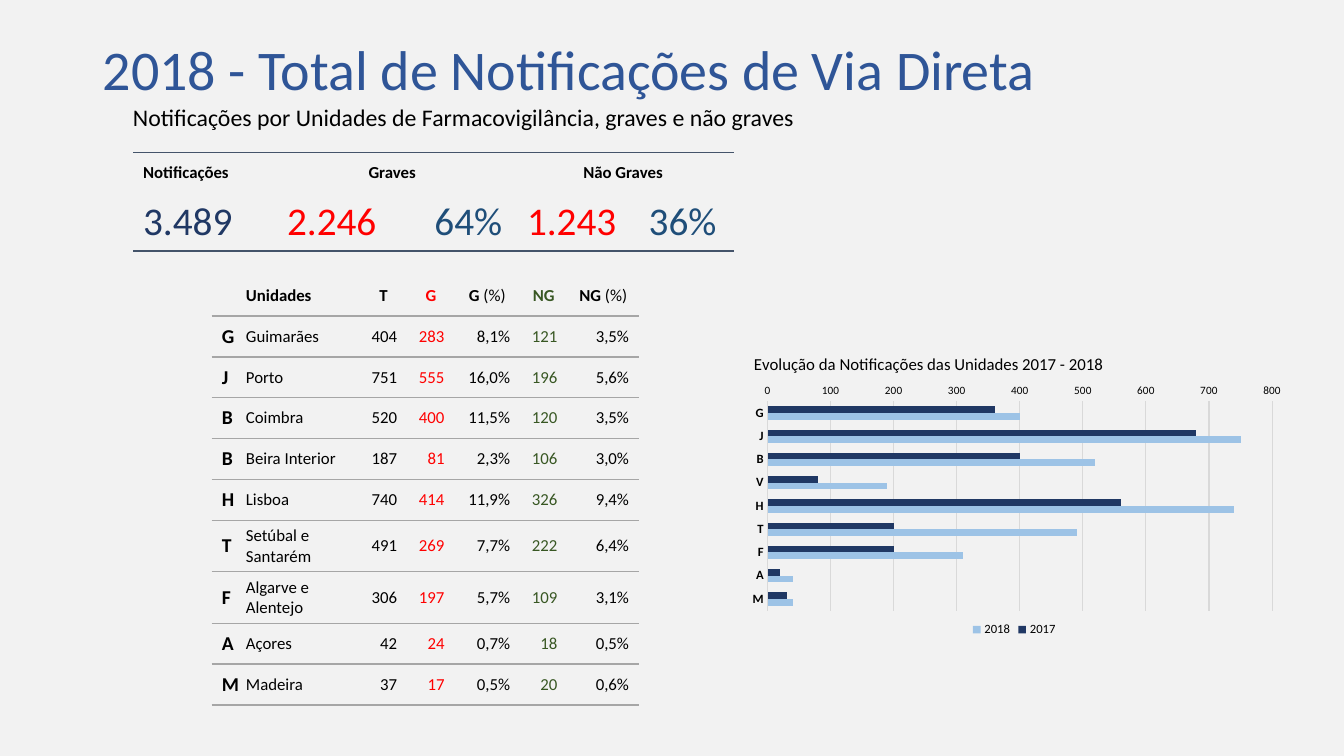
from dataclasses import dataclass

from lxml import etree
from pptx import Presentation
from pptx.chart.data import CategoryChartData
from pptx.dml.color import RGBColor
from pptx.enum.chart import XL_CHART_TYPE, XL_LEGEND_POSITION, XL_TICK_MARK
from pptx.enum.text import MSO_ANCHOR, MSO_AUTO_SIZE, PP_ALIGN
from pptx.oxml import parse_xml
from pptx.oxml.ns import nsdecls, qn
from pptx.util import Inches, Pt


@dataclass(frozen=True)
class Theme:
    font: str = "Calibri"
    background: str = "F2F2F2"
    title: str = "2F5597"
    text: str = "000000"
    navy: str = "203864"
    share: str = "1F4E79"
    serious: str = "FF0000"
    mild: str = "385723"
    light_bar: str = "9DC3E6"
    grid: str = "D9D9D9"
    summary_rule: str = "44546A"
    unit_rule: str = "A6A6A6"
    title_size: int = 40
    subtitle_size: int = 17
    figure_size: int = 28
    letter_size: int = 14
    body_size: int = 12
    chart_size: int = 10
    legend_size: int = 9
    scale_size: int = 8


THEME = Theme()
NO_STYLE = "{2D5ABB26-0587-4C30-8999-92F81FD0307C}"
LEFT, CENTER, RIGHT = PP_ALIGN.LEFT, PP_ALIGN.CENTER, PP_ALIGN.RIGHT

UNITS = [
    ("G", "Guimarães", "404", "283", "8,1%", "121", "3,5%"),
    ("J", "Porto", "751", "555", "16,0%", "196", "5,6%"),
    ("B", "Coimbra", "520", "400", "11,5%", "120", "3,5%"),
    ("B", "Beira Interior", "187", "81", "2,3%", "106", "3,0%"),
    ("H", "Lisboa", "740", "414", "11,9%", "326", "9,4%"),
    ("T", "Setúbal e Santarém", "491", "269", "7,7%", "222", "6,4%"),
    ("F", "Algarve e Alentejo", "306", "197", "5,7%", "109", "3,1%"),
    ("A", "Açores", "42", "24", "0,7%", "18", "0,5%"),
    ("M", "Madeira", "37", "17", "0,5%", "20", "0,6%"),
]
TWO_LINE_LETTERS = "TF"
LINE_ROW, TWO_LINE_ROW = 3.65 / 9, 0.51
CHART_LETTERS = "GJBVHTFAM"
TOTALS_2017 = (360, 680, 400, 80, 560, 200, 200, 20, 30)
TOTALS_2018 = (400, 750, 520, 190, 740, 490, 310, 40, 40)


def style_font(font, size, color=THEME.text, bold=False):
    font.name, font.size, font.bold = THEME.font, Pt(size), bold
    font.color.rgb = RGBColor.from_string(color)


def write(frame, text, size, color=THEME.text, bold=False, align=LEFT):
    frame.text = text
    paragraph = frame.paragraphs[0]
    paragraph.alignment = align
    style_font(paragraph.runs[0].font, size, color, bold)
    return paragraph


def add_title(slide, text):
    title = slide.shapes.title
    title.left, title.top = Inches(0.92), Inches(0.4)
    title.width, title.height = Inches(9.45), Inches(0.63)
    frame = title.text_frame
    frame.auto_size = MSO_AUTO_SIZE.NONE
    frame.vertical_anchor = MSO_ANCHOR.MIDDLE
    write(frame, text, THEME.title_size, THEME.title).line_spacing = 0.9


def add_subtitle(slide, text):
    box = slide.shapes.add_textbox(Inches(1.22), Inches(0.96), Inches(8.26), Inches(0.41))
    box.text_frame.word_wrap = True
    box.text_frame.vertical_anchor = MSO_ANCHOR.MIDDLE
    write(box.text_frame, text, THEME.subtitle_size, align=PP_ALIGN.JUSTIFY)


def add_plain_table(slide, left, top, widths, heights):
    """Add a table without style, fills or lines."""
    table = slide.shapes.add_table(
        len(heights), len(widths), Inches(left), Inches(top),
        Inches(sum(widths)), Inches(sum(heights))).table
    table.first_row = table.horz_banding = False
    table._tbl.tblPr.find(qn("a:tableStyleId")).text = NO_STYLE
    for column, width in zip(table.columns, widths):
        column.width = Inches(width)
    for row, height in zip(table.rows, heights):
        row.height = Inches(height)
    for cell in table.iter_cells():
        cell.fill.background()
    return table


def rule_row(table, row, side, color):
    """Draw a 1 pt line on one side (lnT or lnB) of a row."""
    for column in range(len(table.columns)):
        properties = table.cell(row, column)._tc.get_or_add_tcPr()
        properties.insert(0, parse_xml(
            f'<a:{side} {nsdecls("a")} w="{Pt(1)}"><a:solidFill>'
            f'<a:srgbClr val="{color}"/></a:solidFill></a:{side}>'))


def add_summary(slide):
    table = add_plain_table(slide, 1.32, 1.51, (1.38, 1.18, 1.2, 1.18, 1.02), (0.41, 0.57))
    for column, heading, align in ((0, "Notificações", LEFT), (1, "Graves", CENTER),
                                   (3, "Não Graves", CENTER)):
        cell = table.cell(0, column)
        if column:
            cell.merge(table.cell(0, column + 1))
        cell.vertical_anchor = MSO_ANCHOR.MIDDLE
        write(cell.text_frame, heading, THEME.body_size, bold=True, align=align)
    figures = (("3.489", THEME.navy, LEFT), ("2.246", THEME.serious, CENTER),
               ("64%", THEME.share, RIGHT), ("1.243", THEME.serious, CENTER),
               ("36%", THEME.share, CENTER))
    for column, (figure, color, align) in enumerate(figures):
        write(table.cell(1, column).text_frame, figure, THEME.figure_size, color, align=align)
    rule_row(table, 0, "lnT", THEME.summary_rule)
    rule_row(table, 1, "lnB", THEME.summary_rule)


def add_units(slide):
    heights = [LINE_ROW] + [TWO_LINE_ROW if unit[0] in TWO_LINE_LETTERS else LINE_ROW
                            for unit in UNITS]
    table = add_plain_table(slide, 2.1, 2.73, (0.23, 1.23, 0.47, 0.47, 0.65, 0.47, 0.71),
                            heights)
    headings = ("", "Unidades", "T", "G", "G", "NG", "NG")
    colors = (THEME.text, THEME.text, THEME.text, THEME.serious, THEME.text,
              THEME.mild, THEME.text)
    for column, (heading, color) in enumerate(zip(headings, colors)):
        if not heading:
            continue
        cell = table.cell(0, column)
        cell.vertical_anchor = MSO_ANCHOR.MIDDLE
        paragraph = write(cell.text_frame, heading, THEME.body_size, color, True,
                          LEFT if column == 1 else CENTER)
        if column in (4, 6):
            percent = paragraph.add_run()
            percent.text = " (%)"
            style_font(percent.font, THEME.body_size)
    for row, unit in enumerate(UNITS, start=1):
        for column, (value, color) in enumerate(zip(unit, colors)):
            cell = table.cell(row, column)
            cell.vertical_anchor = MSO_ANCHOR.MIDDLE
            is_letter = column == 0
            size = THEME.letter_size if is_letter else THEME.body_size
            align = (CENTER, LEFT)[column] if column < 2 else RIGHT
            write(cell.text_frame, value, size, color, is_letter, align)
    for row in range(len(table.rows)):
        rule_row(table, row, "lnB", THEME.unit_rule)


def set_layout(parent, position, **values):
    """Fix the place of a chart part, as fractions of the chart."""
    for old in parent.findall(qn("c:layout")):
        parent.remove(old)
    layout = parse_xml(f'<c:layout {nsdecls("c")}><c:manualLayout/></c:layout>')
    for name, value in values.items():
        etree.SubElement(layout[0], qn(f"c:{name}")).set("val", str(value))
    parent.insert(position, layout)


def add_evolution(slide):
    data = CategoryChartData(number_format="#,##0")
    data.categories = list(CHART_LETTERS)
    data.add_series("2017", TOTALS_2017)
    data.add_series("2018", TOTALS_2018)
    chart = slide.shapes.add_chart(
        XL_CHART_TYPE.BAR_CLUSTERED, Inches(7.28), Inches(3.35),
        Inches(5.56), Inches(3.01), data).chart
    style_font(chart.font, THEME.chart_size)
    write(chart.chart_title.text_frame, "Evolução da Notificações das Unidades 2017 - 2018",
          THEME.body_size)
    set_layout(chart.chart_title._element, 1, xMode="edge", yMode="edge", x=0.03, y=0.04)
    set_layout(chart._chartSpace.chart.plotArea, 0, layoutTarget="inner", xMode="edge",
               yMode="edge", x=0.06, y=0.21, w=0.9, h=0.69)

    plot = chart.plots[0]
    plot.gap_width, plot.overlap, plot.vary_by_categories = 150, 0, False
    for series, color in zip(plot.series, (THEME.navy, THEME.light_bar)):
        series.format.fill.solid()
        series.format.fill.fore_color.rgb = RGBColor.from_string(color)

    letters, scale = chart.category_axis, chart.value_axis
    letters.reverse_order = True
    scale.minimum_scale, scale.maximum_scale, scale.major_unit = 0, 800, 100
    for axis in (letters, scale):
        axis.major_tick_mark = axis.minor_tick_mark = XL_TICK_MARK.NONE
        axis.format.line.fill.background()
    style_font(letters.tick_labels.font, THEME.legend_size, bold=True)
    style_font(scale.tick_labels.font, THEME.scale_size)
    grid = scale.major_gridlines.format.line
    grid.width, grid.color.rgb = Pt(0.75), RGBColor.from_string(THEME.grid)

    chart.has_legend = True
    chart.legend.position = XL_LEGEND_POSITION.BOTTOM
    chart.legend.include_in_layout = False
    style_font(chart.legend.font, THEME.legend_size)


def main():
    deck = Presentation()
    deck.slide_width, deck.slide_height = Inches(13.33), Inches(7.5)
    slide = deck.slides.add_slide(deck.slide_layouts[5])
    slide.background.fill.solid()
    slide.background.fill.fore_color.rgb = RGBColor.from_string(THEME.background)
    add_title(slide, "2018 - Total de Notificações de Via Direta")
    add_subtitle(slide, "Notificações por Unidades de Farmacovigilância, graves e não graves")
    add_summary(slide)
    add_units(slide)
    add_evolution(slide)
    deck.save("out.pptx")


if __name__ == "__main__":
    main()
